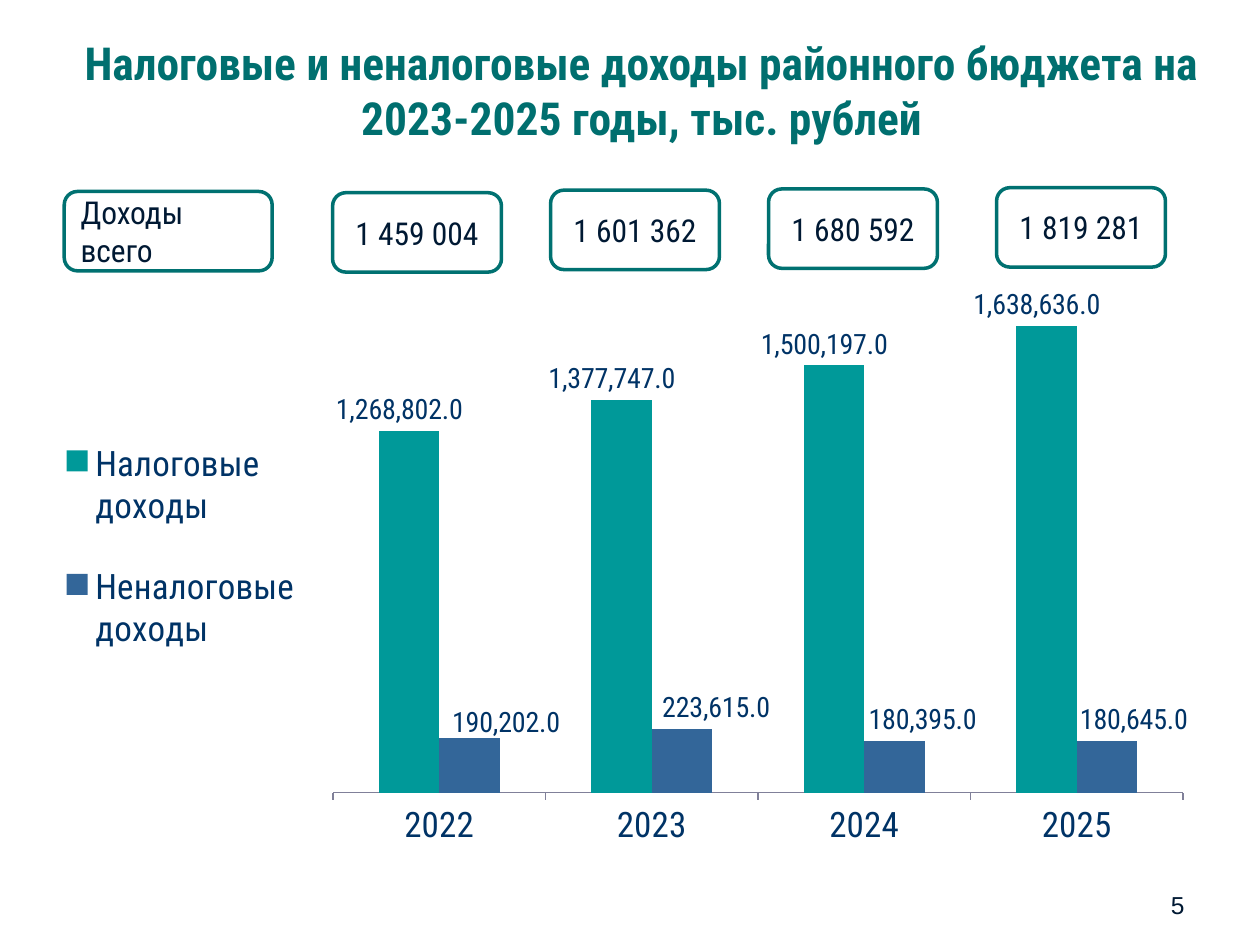
import pptx
import pptx.util
import pptx.chart.data
import pptx.dml.color
import pptx.enum.chart
import pptx.enum.shapes
import pptx.enum.text
import pptx.oxml
import pptx.oxml.ns

Inches = pptx.util.Inches
Pt = pptx.util.Pt
Align = pptx.enum.text.PP_ALIGN
Anchor = pptx.enum.text.MSO_ANCHOR

FONT = "Roboto Condensed"
DARK, NAVY, GREEN = "001933", "003366", "007171"
TITLE = "Налоговые и неналоговые доходы районного бюджета на 2023-2025 годы, тыс. рублей"
YEARS = ["2022", "2023", "2024", "2025"]
SERIES = [
    ("Налоговые доходы", "009999", [1268802, 1377747, 1500197, 1638636]),
    ("Неналоговые доходы", "336699", [190202, 223615, 180395, 180645]),
]
NUMBER_FORMAT = r"_-* #,##0.0_р_._-;\-* #,##0.0_р_._-"
LABEL_SHIFTS = [(0.038, 0.01), (0.036, 0), (0.031, 0), (0.03, 0)]
TOTALS = [
    ("Доходы всего", 0.51, 1.52, 1.65, Align.LEFT),
    ("1 459 004", 2.64, 1.53, 1.34, Align.CENTER),
    ("1 601 362", 4.37, 1.51, 1.34, Align.CENTER),
    ("1 680 592", 6.1, 1.5, 1.34, Align.CENTER),
    ("1 819 281", 7.91, 1.49, 1.34, Align.CENTER),
]


def color(value):
    return pptx.dml.color.RGBColor.from_string(value)


def style_font(font, size, value, name=FONT, bold=False):
    font.size, font.name, font.bold = Pt(size), name, bold
    font.color.rgb = color(value)


def write(shape, text, size, value, align, anchor, name=FONT, bold=False):
    frame = shape.text_frame
    frame.word_wrap = True
    frame.vertical_anchor = anchor
    frame.text = text
    para = frame.paragraphs[0]
    para.alignment = align
    style_font(para.runs[0].font, size, value, name, bold)


def add_text(page, place, *style, **options):
    box = page.shapes.add_textbox(*map(Inches, place))
    write(box, *style, **options)


def manual_layout(**values):
    parts = "".join(f'<c:{tag} val="{value}"/>' for tag, value in values.items())
    return pptx.oxml.parse_xml(
        f'<c:layout {pptx.oxml.ns.nsdecls("c")}><c:manualLayout>{parts}'
        "</c:manualLayout></c:layout>"
    )


def set_layout(element, layout, position):
    for old in element.findall(pptx.oxml.ns.qn("c:layout")):
        element.remove(old)
    element.insert(position, layout)


def add_income_chart(page):
    data = pptx.chart.data.CategoryChartData(number_format=NUMBER_FORMAT)
    data.categories = YEARS
    for name, fill, values in SERIES:
        data.add_series(name, values)
    kinds = pptx.enum.chart
    chart = page.shapes.add_chart(
        kinds.XL_CHART_TYPE.COLUMN_CLUSTERED,
        Inches(0.28), Inches(2.02), Inches(9.61), Inches(4.74), data,
    ).chart
    style_font(chart.font, 18, NAVY, "Arial")
    chart.has_title = False

    chart.has_legend = True
    legend = chart.legend
    legend.position = kinds.XL_LEGEND_POSITION.RIGHT
    legend.include_in_layout = False
    style_font(legend.font, 20, NAVY)
    set_layout(legend._element, manual_layout(
        xMode="edge", yMode="edge", x=0.01, y=0.25, w=0.22, h=0.48), 1)

    years = chart.category_axis
    years.major_tick_mark = kinds.XL_TICK_MARK.OUTSIDE
    years.format.line.color.rgb = color("808099")
    style_font(years.tick_labels.font, 20, NAVY)
    scale = chart.value_axis
    scale.minimum_scale, scale.maximum_scale = 0, 1800000
    scale.has_major_gridlines = False
    scale.visible = False

    plot = chart.plots[0]
    plot.gap_width, plot.overlap = 150, 0
    plot.vary_by_categories = False
    set_layout(plot._element.getparent(), manual_layout(
        layoutTarget="inner", xMode="edge", yMode="edge",
        x=0.246, y=0.043, w=0.702, h=0.858), 0)
    outside = kinds.XL_LABEL_POSITION.OUTSIDE_END
    for series, (name, fill, values) in zip(plot.series, SERIES):
        series.format.fill.solid()
        series.format.fill.fore_color.rgb = color(fill)
        labels = series.data_labels
        labels.show_value = True
        labels.position = outside
        style_font(labels.font, 16, NAVY)

    series = plot.series[1]
    for index, (x, y) in enumerate(LABEL_SHIFTS):
        label = series.points[index].data_label
        style_font(label.font, 16, NAVY)
        label.position = outside
        element = series.data_labels._element.findall(pptx.oxml.ns.qn("c:dLbl"))[index]
        set_layout(element, manual_layout(x=x, y=y), 1)


def add_total(page, text, left, top, width, align):
    box = page.shapes.add_shape(
        pptx.enum.shapes.MSO_SHAPE.ROUNDED_RECTANGLE,
        Inches(left), Inches(top), Inches(width), Inches(0.63),
    )
    box.shadow.inherit = False
    box.fill.solid()
    box.fill.fore_color.rgb = color("FFFFFF")
    box.line.color.rgb = color(GREEN)
    box.line.width = Pt(2)
    write(box, text, 18, DARK, align, Anchor.MIDDLE)


def main():
    deck = pptx.Presentation()
    deck.slide_width, deck.slide_height = Inches(10), Inches(7.5)
    page = deck.slides.add_slide(deck.slide_layouts[6])
    add_text(page, (0.35, 0.28, 9.49, 0.87), TITLE, 26, "006F6F",
             Align.CENTER, Anchor.MIDDLE, bold=True)
    add_income_chart(page)
    add_text(page, (7.17, 6.83, 2.33, 0.52), "5", 14, DARK,
             Align.RIGHT, Anchor.BOTTOM, name="Arial")
    for total in TOTALS:
        add_total(page, *total)
    deck.save("out.pptx")


if __name__ == "__main__":
    main()
